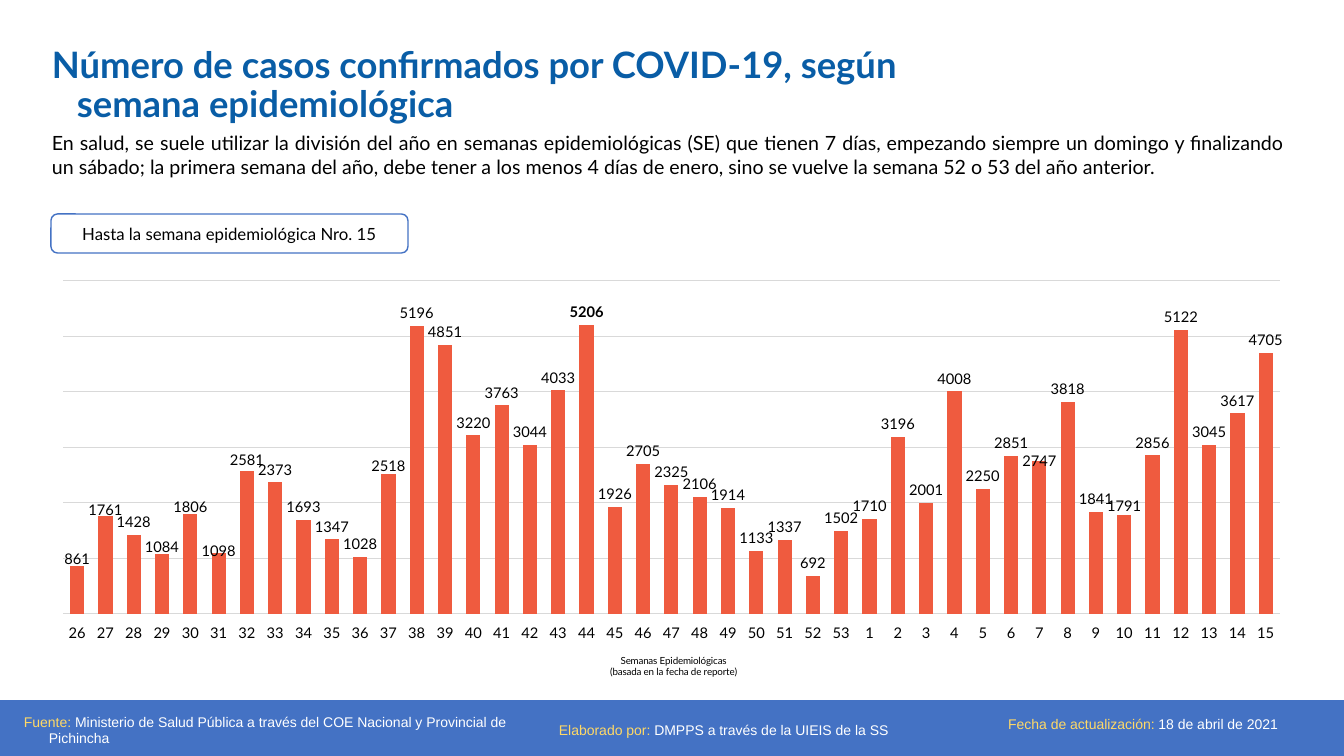
from lxml import etree
from pptx import Presentation
from pptx.chart.data import CategoryChartData
from pptx.dml.color import RGBColor
from pptx.enum.chart import XL_CHART_TYPE, XL_LABEL_POSITION, XL_TICK_LABEL_POSITION, XL_TICK_MARK
from pptx.enum.shapes import MSO_SHAPE
from pptx.enum.text import MSO_ANCHOR, PP_ALIGN
from pptx.oxml import parse_xml
from pptx.oxml.ns import nsdecls, qn
from pptx.util import Pt

COLUMNS = XL_CHART_TYPE.COLUMN_CLUSTERED
OUTSIDE_END = XL_LABEL_POSITION.OUTSIDE_END
LOW = XL_TICK_LABEL_POSITION.LOW
NO_TICK = XL_TICK_MARK.NONE
RECT, ROUNDED = MSO_SHAPE.RECTANGLE, MSO_SHAPE.ROUNDED_RECTANGLE
TOP, MIDDLE = MSO_ANCHOR.TOP, MSO_ANCHOR.MIDDLE
LEFT, CENTER, JUSTIFY = PP_ALIGN.LEFT, PP_ALIGN.CENTER, PP_ALIGN.JUSTIFY

SLIDE_W, SLIDE_H = 1344, 756
EMU_PER_PX = 12192000 / SLIDE_W
HANGING = 25
BLUE, NAVY, YELLOW, ORANGE = "4472C4", "095DA6", "FFD966", "EF5B3F"
BLACK, WHITE, GREY = "000000", "FFFFFF", "D9D9D9"

TITLE = "Número de casos confirmados por COVID-19, según semana epidemiológica"
INTRO = (
    "En salud, se suele utilizar la división del año en semanas epidemiológicas (SE) "
    "que tienen 7 días, empezando siempre un domingo y finalizando un sábado; la primera "
    "semana del año, debe tener a los menos 4 días de enero, sino se vuelve la semana "
    "52 o 53 del año anterior."
)
CUTOFF = "Hasta la semana epidemiológica Nro. 15"
AXIS_TITLE = ["Semanas Epidemiológicas", "(basada en la fecha de reporte)"]
FOOTER = [
    ((14, 707, 507, 48), LEFT, HANGING, "Fuente:",
     " Ministerio de Salud Pública a través del COE Nacional y Provincial de Pichincha"),
    ((549, 710, 463, 43), LEFT, 0, "Elaborado por: ", "DMPPS a través de la UIEIS de la SS"),
    ((973, 698, 340, 55), CENTER, HANGING, "Fecha de actualización: ", "18 de abril de 2021"),
]

WEEKS = [*range(26, 54), *range(1, 16)]
CASES = [
    861, 1761, 1428, 1084, 1806, 1098, 2581, 2373, 1693, 1347, 1028, 2518, 5196, 4851,
    3220, 3763, 3044, 4033, 5206, 1926, 2705, 2325, 2106, 1914, 1133, 1337, 692, 1502,
    1710, 3196, 2001, 4008, 2250, 2851, 2747, 3818, 1841, 1791, 2856, 5122, 3045, 3617, 4705,
]
PEAK_WEEK = 44
LABEL_DROPS = {26: 6, 27: 6, 29: 6, 30: 6, 31: 11, 32: 2, 37: 4, 7: 12, 10: 4}
CHART_BOX = (26, 262, 1290, 442)
PLOT_BOX = (63, 281, 1217, 333)
AXIS_TITLE_AT = (607, 650)


def px(length):
    return round(length * EMU_PER_PX)


def box(bounds):
    return [px(length) for length in bounds]


def color(hex_code):
    return RGBColor.from_string(hex_code)


def style(font, size, hex_code, face="Lato", bold=False):
    font.name, font.size, font.bold = face, Pt(size), bold
    font.color.rgb = color(hex_code)


def write(frame, runs, size, face="Lato", align=LEFT, anchor=TOP, hanging=0, spacing=None, bold=False):
    frame.word_wrap = True
    frame.vertical_anchor = anchor
    paragraph = frame.paragraphs[0]
    paragraph.alignment = align
    paragraph.line_spacing = spacing
    if hanging:
        properties = paragraph._p.get_or_add_pPr()
        properties.set("marL", str(px(hanging)))
        properties.set("indent", str(-px(hanging)))
    for words, hex_code in runs:
        run = paragraph.add_run()
        run.text = words
        style(run.font, size, hex_code, face, bold)


def place(x, y, w=None, h=None, target=None, mode="edge"):
    values = {"x": x, "y": y, "w": w, "h": h}
    layout = parse_xml(f"<c:layout {nsdecls('c')}><c:manualLayout/></c:layout>")
    settings = [("layoutTarget", target)]
    if mode:
        settings += [("xMode", mode), ("yMode", mode)]
    settings += [(key, value if value is None else round(value, 4)) for key, value in values.items()]
    for tag, value in settings:
        if value is not None:
            etree.SubElement(layout[0], qn(f"c:{tag}")).set("val", str(value))
    return layout


def set_layout(parent, layout, after=None):
    for old in parent.findall(qn("c:layout")):
        parent.remove(old)
    if after is None:
        parent.insert(0, layout)
    else:
        after.addnext(layout)


def chart_fraction(x, y):
    left, top, width, height = CHART_BOX
    return (x - left) / width, (y - top) / height


def add_cases_chart(slide):
    data = CategoryChartData()
    data.categories = [str(week) for week in WEEKS]
    data.add_series("Casos confirmados", CASES)
    chart = slide.shapes.add_chart(COLUMNS, *box(CHART_BOX), data).chart
    chart.has_legend = chart.has_title = False
    style(chart.font, 10.5, BLACK)
    plot_w, plot_h = PLOT_BOX[2] / CHART_BOX[2], PLOT_BOX[3] / CHART_BOX[3]
    set_layout(chart._chartSpace.chart.plotArea,
               place(*chart_fraction(*PLOT_BOX[:2]), plot_w, plot_h, "inner"))

    cases_axis = chart.value_axis
    cases_axis.minimum_scale, cases_axis.maximum_scale, cases_axis.major_unit = 0, 6000, 1000
    cases_axis.visible = False
    cases_axis.has_major_gridlines = True
    weeks_axis = chart.category_axis
    weeks_axis.major_tick_mark = NO_TICK
    weeks_axis.tick_label_position = LOW
    style(weeks_axis.tick_labels.font, 10.5, BLACK)
    for line in (cases_axis.major_gridlines.format.line, weeks_axis.format.line):
        line.color.rgb, line.width = color(GREY), Pt(0.75)

    heading = weeks_axis.axis_title
    for number, words in enumerate(AXIS_TITLE):
        frame = heading.text_frame
        paragraph = frame.add_paragraph() if number else frame.paragraphs[0]
        run = paragraph.add_run()
        run.text = words
        style(run.font, 7, BLACK)
    set_layout(heading._element, place(*chart_fraction(*AXIS_TITLE_AT)),
               heading._element.find(qn("c:tx")))

    plot = chart.plots[0]
    plot.gap_width, plot.vary_by_categories = 100, False
    bars = plot.series[0]
    bars.format.fill.solid()
    bars.format.fill.fore_color.rgb = color(ORANGE)
    labels = bars.data_labels
    labels.show_value, labels.position = True, OUTSIDE_END
    style(labels.font, 10.5, BLACK)
    for week in (*LABEL_DROPS, PEAK_WEEK):
        index = WEEKS.index(week)
        label = bars.points[index].data_label
        style(label.font, 10.5, BLACK, bold=week == PEAK_WEEK)
        label.position = OUTSIDE_END
        if week in LABEL_DROPS:
            entry = next(item for item in labels._element.findall(qn("c:dLbl"))
                         if item.find(qn("c:idx")).get("val") == str(index))
            set_layout(entry, place(0, LABEL_DROPS[week] / CHART_BOX[3], mode=None),
                       entry.find(qn("c:idx")))


def main():
    deck = Presentation()
    deck.slide_width, deck.slide_height = px(SLIDE_W), px(SLIDE_H)
    slide = deck.slides.add_slide(deck.slide_layouts[6])
    shapes = slide.shapes

    band = shapes.add_shape(RECT, *box((0, 700, SLIDE_W, 56)))
    band.shadow.inherit = False
    band.fill.solid()
    band.fill.fore_color.rgb = color(BLUE)
    band.line.fill.background()

    title = shapes.add_textbox(*box((42, 42, 985, 88)))
    write(title.text_frame, [(TITLE, NAVY)], 26, hanging=HANGING, spacing=0.9, bold=True)
    intro = shapes.add_textbox(*box((42, 126, 1253, 82)))
    write(intro.text_frame, [(INTRO, BLACK)], 14, align=JUSTIFY)

    cutoff = shapes.add_shape(ROUNDED, *box((51, 214, 357, 39)))
    cutoff.shadow.inherit = False
    cutoff.fill.background()
    cutoff.line.color.rgb, cutoff.line.width = color(BLUE), Pt(1)
    write(cutoff.text_frame, [(CUTOFF, BLACK)], 12, align=CENTER, anchor=MIDDLE)

    add_cases_chart(slide)

    for bounds, align, hanging, caption, detail in FOOTER:
        credit = shapes.add_textbox(*box(bounds))
        write(credit.text_frame, [(caption, YELLOW), (detail, WHITE)], 10, "Arial",
              align, MIDDLE, hanging, 0.9)
    deck.save("out.pptx")


if __name__ == "__main__":
    main()
